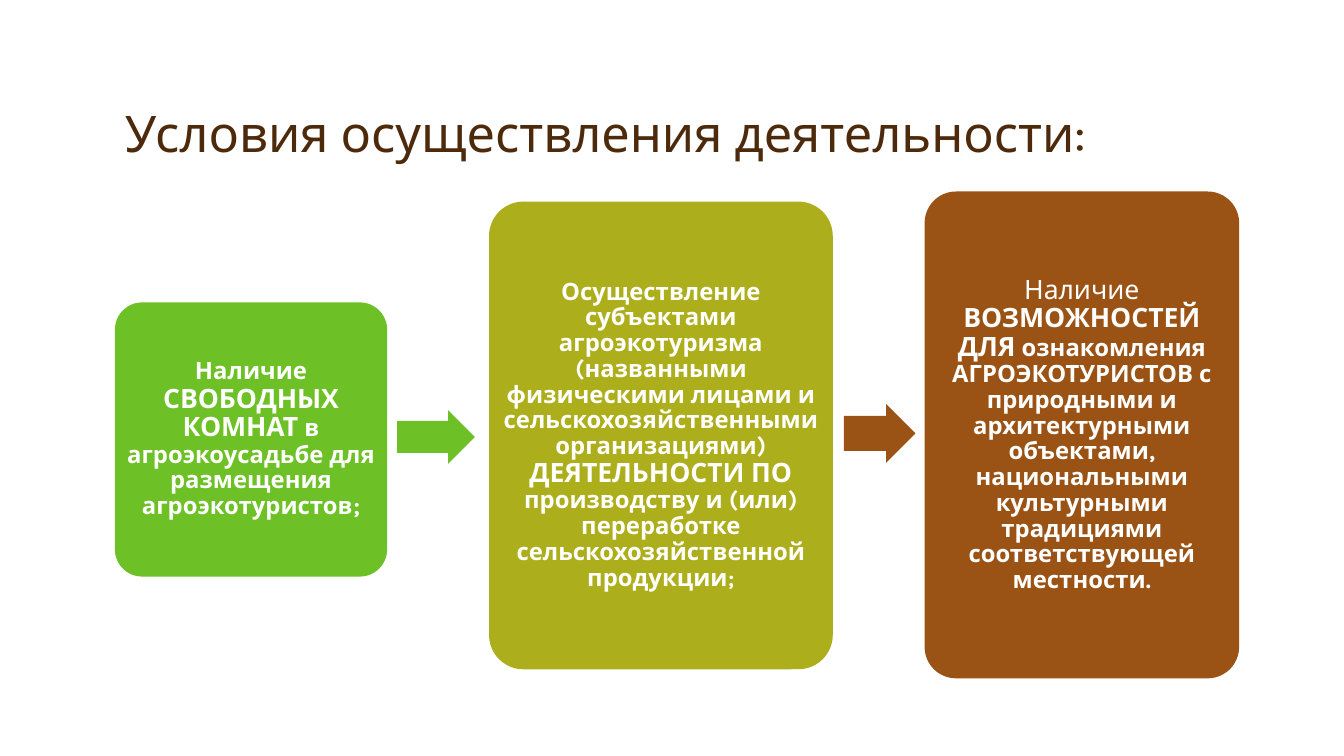
from pptx import Presentation, util as u
from pptx.dml.color import RGBColor
from pptx.enum import shapes, text

PX = 9144
FONT = "Karla"
BROWN = RGBColor(0x4D, 0x2A, 0x0B)
WHITE = RGBColor(0xFF, 0xFF, 0xFF)
GREEN = RGBColor(0x6D, 0xC0, 0x25)
OLIVE = RGBColor(0xAD, 0xAE, 0x1C)
RUST = RGBColor(0x9A, 0x53, 0x15)

CARDS = [
    ((114, 300, 270, 272), GREEN, [
        ("Наличие ", 17, True),
        ("СВОБОДНЫХ КОМНАТ", 19, True),
        (" в агроэкоусадьбе для размещения агроэкотуристов;", 17, True)]),
    ((485, 200, 341, 464), OLIVE, [
        ("Осуществление субъектами агроэкотуризма (названными физическими "
         "лицами и сельскохозяйственными организациями) ", 17, True),
        ("ДЕЯТЕЛЬНОСТИ ПО ", 19, True),
        ("производству и (или) переработке сельскохозяйственной продукции",
         17, True),
        (";", 16, True)]),
    ((917, 190, 312, 483), RUST, [
        ("Наличие ", 19, False),
        ("ВОЗМОЖНОСТЕЙ ДЛЯ", 19, True),
        (" ознакомления АГРОЭКОТУРИСТОВ с природными и архитектурными "
         "объектами, национальными культурными традициями соответствующей "
         "местности.", 17, True)]),
]
ARROWS = [((394, 407, 77, 53), GREEN), ((837, 401, 71, 58), RUST)]


def scale(box):
    return [n * PX for n in box]


def apply(item, style):
    for key, value in style.items():
        setattr(item, key, value)


def write(frame, runs, color, align, anchor):
    apply(frame, {"word_wrap": True, "vertical_anchor": anchor})
    para = frame.paragraphs[0]
    apply(para, {"alignment": align, "line_spacing": 0.9})
    for words, size, bold in runs:
        run = para.add_run()
        run.text = words
        apply(run.font, {"name": FONT, "size": u.Pt(size), "bold": bold})
        run.font.color.rgb = color


def add_block(slide, kind, box, color, ratios):
    block = slide.shapes.add_shape(kind, *scale(box))
    block.shadow.inherit = False
    block.fill.solid()
    block.fill.fore_color.rgb = color
    block.line.fill.background()
    for i, ratio in enumerate(ratios):
        block.adjustments[i] = ratio
    return block


def add_title(slide, box):
    frame = slide.shapes.add_textbox(*scale(box)).text_frame
    write(frame, [("Условия осуществления деятельности:", 36, False)],
          BROWN, text.PP_ALIGN.LEFT, text.MSO_ANCHOR.BOTTOM)


def add_card(slide, box, color, runs):
    card = add_block(slide, shapes.MSO_SHAPE.ROUNDED_RECTANGLE, box, color, [0.1])
    frame = card.text_frame
    apply(frame, {"margin_" + side: 0
                  for side in ("left", "right", "top", "bottom")})
    write(frame, runs, WHITE, text.PP_ALIGN.CENTER, text.MSO_ANCHOR.MIDDLE)


def add_arrow(slide, box, color):
    add_block(slide, shapes.MSO_SHAPE.RIGHT_ARROW, box, color, [0.6, 0.5])


def main():
    deck = Presentation()
    apply(deck, {"slide_width": 1333 * PX, "slide_height": 750 * PX})
    slide = deck.slides.add_slide(deck.slide_layouts[6])
    add_title(slide, (114, 85, 1100, 82))
    for card in CARDS:
        add_card(slide, *card)
    for arrow in ARROWS:
        add_arrow(slide, *arrow)
    deck.save("out.pptx")


if __name__ == "__main__":
    main()
